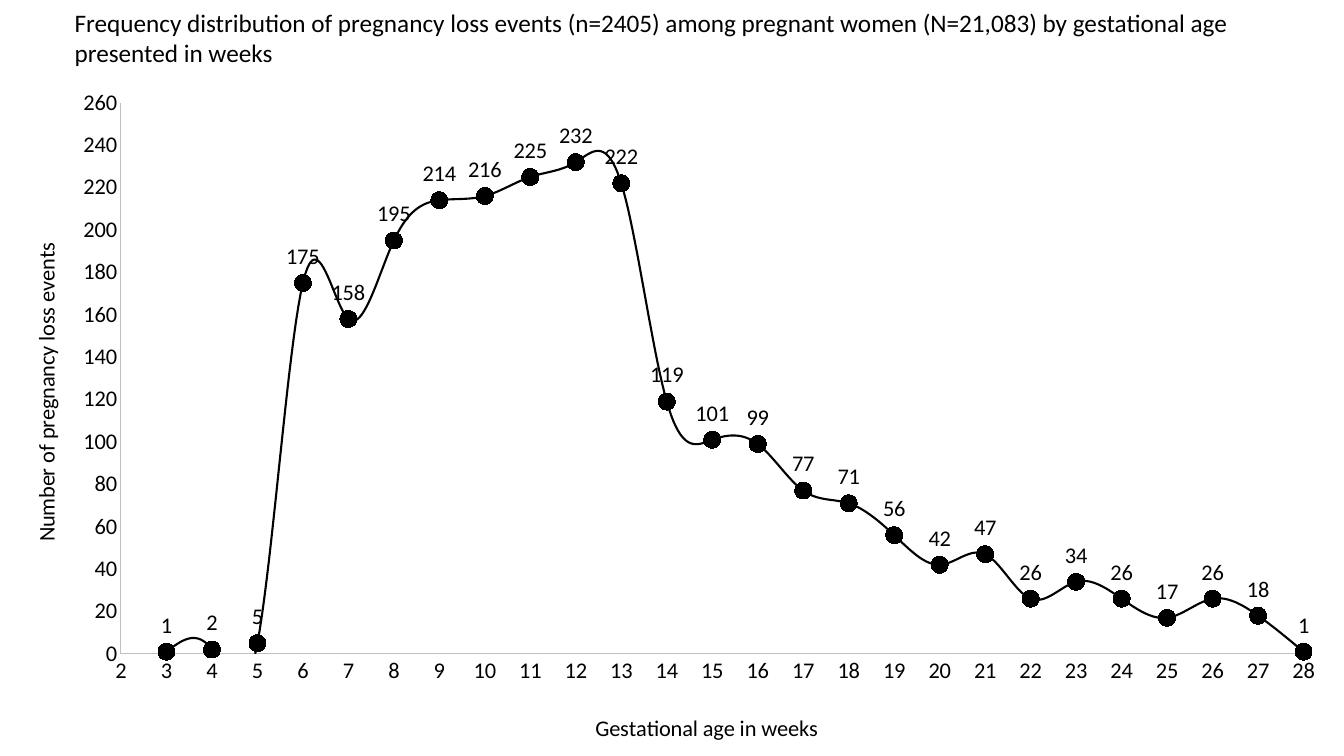
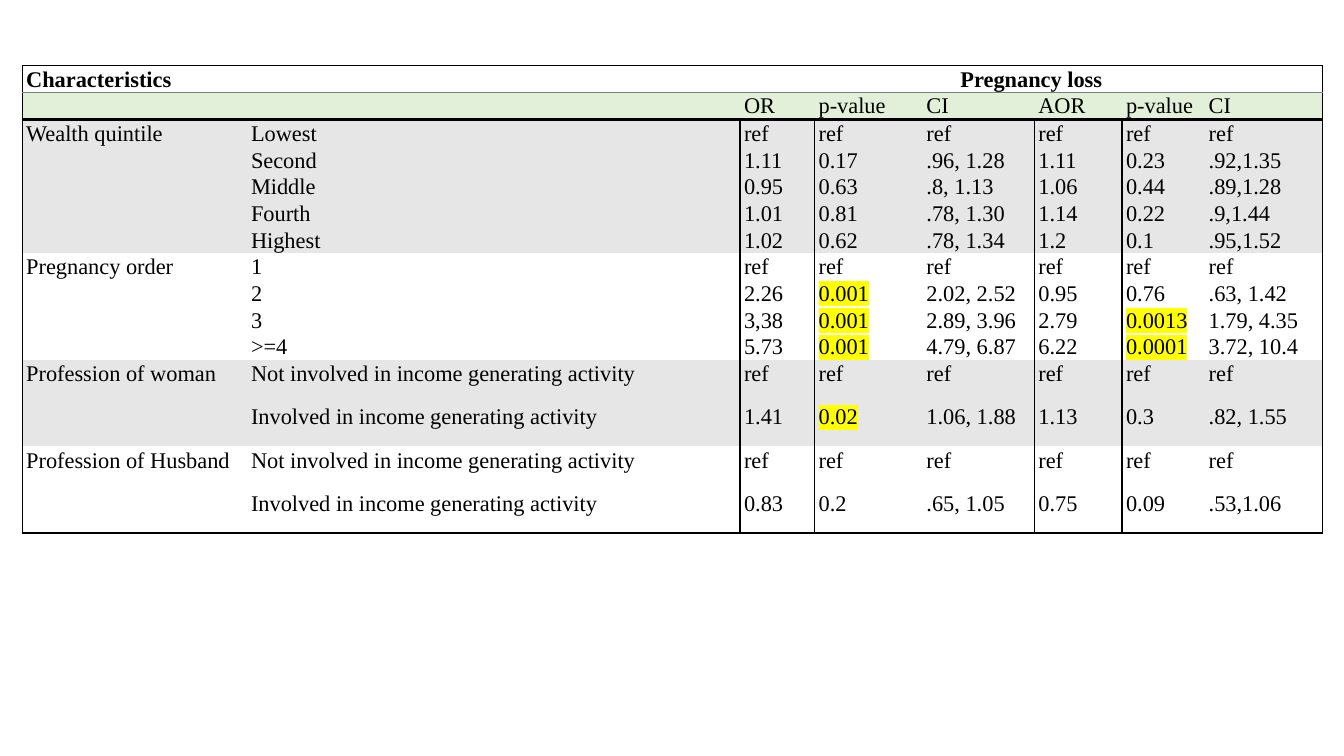
from dataclasses import dataclass

from lxml.etree import SubElement
from pptx import Presentation
from pptx.chart.data import XyChartData
from pptx.chart.datalabel import DataLabels
from pptx.dml.color import RGBColor
from pptx.enum.chart import (XL_CHART_TYPE, XL_LABEL_POSITION,
                             XL_MARKER_STYLE, XL_TICK_MARK)
from pptx.enum.text import MSO_ANCHOR, MSO_AUTO_SIZE, PP_ALIGN
from pptx.oxml.ns import qn
from pptx.util import Inches, Pt


@dataclass(frozen=True)
class Theme:
    ink: str = "000000"
    axis: str = "BFBFBF"
    rule: str = "7F7F7F"
    white: str = "FFFFFF"
    band: str = "E7E6E6"
    head: str = "E2F0D9"
    mark: str = "FFFF00"
    sans: str = "Calibri"
    serif: str = "Times New Roman"
    title: int = 18
    body: int = 16


THEME = Theme()
WIDE, HIGH = 13.33, 7.5

TITLE = ("Frequency distribution of pregnancy loss events (n=2405) among "
         "pregnant women (N=21,083) by gestational age presented in weeks")
FIRST = 3
LOSSES = [1, 2, 5, 175, 158, 195, 214, 216, 225, 232, 222, 119, 101,
          99, 77, 71, 56, 42, 47, 26, 34, 26, 17, 26, 18, 1]
# title, minimum, maximum, step, title place as shares of the chart
AXES = [("Gestational age in weeks", 2, 28, 1, (0.44, 0.93)),
        ("Number of pregnancy loss events", 0, 260, 20, (0.02, 0.24))]
PLOT = (0.09, 0.04, 0.88, 0.81)

COLS = [2.23, 4.89, 0.74, 1.07, 1.11, 0.87, 0.82, 1.17]
LEFT, TOP = 0.22, 0.65
LINE, TALL = 0.26, 0.43
HEAD_END = 1.19
P_COLS = (3, 6)
LEVEL = 0.05
STARTS, ENDS = (0, 2, 5), (1, 4, 7)

HEAD = [
    ["Characteristics", "", "Pregnancy loss"] + [""] * 5,
    ["", "", "OR", "p-value", "CI", "AOR", "p-value", "CI"],
]
REF = ["ref"] * 6
IDLE = "Not involved in income generating activity"
BUSY = "Involved in income generating activity"
# label, row height, rows
GROUPS = [
    ("Wealth quintile", LINE, [
        ["Lowest", *REF],
        ["Second", "1.11", "0.17", ".96, 1.28", "1.11", "0.23", ".92,1.35"],
        ["Middle", "0.95", "0.63", ".8, 1.13", "1.06", "0.44", ".89,1.28"],
        ["Fourth", "1.01", "0.81", ".78, 1.30", "1.14", "0.22", ".9,1.44"],
        ["Highest", "1.02", "0.62", ".78, 1.34", "1.2", "0.1", ".95,1.52"],
    ]),
    ("Pregnancy order", LINE, [
        ["1", *REF],
        ["2", "2.26", "0.001", "2.02, 2.52", "0.95", "0.76", ".63, 1.42"],
        ["3", "3,38", "0.001", "2.89, 3.96", "2.79", "0.0013", "1.79, 4.35"],
        [">=4", "5.73", "0.001", "4.79, 6.87", "6.22", "0.0001", "3.72, 10.4"],
    ]),
    ("Profession of woman", TALL, [
        [IDLE, *REF],
        [BUSY, "1.41", "0.02", "1.06, 1.88", "1.13", "0.3", ".82, 1.55"],
    ]),
    ("Profession of Husband", TALL, [
        [IDLE, *REF],
        [BUSY, "0.83", "0.2", ".65, 1.05", "0.75", "0.09", ".53,1.06"],
    ]),
]
NO_GRID = "{2D5ABB26-0587-4C30-8999-92F81FD0307C}"


def rgb(tone):
    return RGBColor.from_string(tone)


def style(font, size, face, bold=False):
    font.size, font.name, font.bold = Pt(size), face, bold
    font.color.rgb = rgb(THEME.ink)


def place(node, x, y, w=None, h=None):
    """Fix a chart part at shares of the chart's size."""
    box = node.find(qn("c:layout"))
    if box is None:
        box = SubElement(node, qn("c:layout"))
        node.insert(0, box)
    for child in list(box):
        box.remove(child)
    man = SubElement(box, qn("c:manualLayout"))
    parts = [("xMode", "edge"), ("yMode", "edge"), ("x", x), ("y", y)]
    if w:
        parts = [("layoutTarget", "inner"), *parts, ("w", w), ("h", h)]
    for tag, val in parts:
        SubElement(man, qn(f"c:{tag}")).set("val", str(val))


def add_title(slide):
    title = slide.shapes.title
    title.left, title.top = Inches(0.64), Inches(0.02)
    title.width, title.height = Inches(12.05), Inches(0.71)
    frame = title.text_frame
    frame.text = TITLE
    frame.word_wrap = True
    frame.auto_size = MSO_AUTO_SIZE.NONE
    frame.vertical_anchor = MSO_ANCHOR.TOP
    para = frame.paragraphs[0]
    para.alignment = PP_ALIGN.LEFT
    style(para.font, THEME.title, THEME.sans)


def set_axis(axis, name, low, high, step, spot):
    axis.minimum_scale, axis.maximum_scale = low, high
    axis.major_unit = step
    axis.has_major_gridlines = False
    axis.major_tick_mark = axis.minor_tick_mark = XL_TICK_MARK.NONE
    axis.format.line.color.rgb = rgb(THEME.axis)
    axis.format.line.width = Pt(0.75)
    style(axis.tick_labels.font, THEME.body, THEME.sans)
    frame = axis.axis_title.text_frame
    frame.text = name
    style(frame.paragraphs[0].font, THEME.body, THEME.sans)
    place(axis.axis_title._element, *spot)


def add_curve(slide):
    data = XyChartData()
    dots = data.add_series("Series 1")
    for week, count in enumerate(LOSSES, FIRST):
        dots.add_data_point(week, count)
    top = HIGH * 0.1
    chart = slide.shapes.add_chart(
        XL_CHART_TYPE.XY_SCATTER_SMOOTH, 0, Inches(top),
        Inches(WIDE), Inches(HIGH - top), data).chart
    chart.has_legend = chart.has_title = False
    style(chart.font, THEME.body, THEME.sans)
    for axis, info in zip((chart.category_axis, chart.value_axis), AXES):
        set_axis(axis, *info)
    turn = chart.value_axis.axis_title.text_frame._txBody.bodyPr
    turn.set("rot", "-5400000")
    turn.set("vert", "horz")
    plot = chart.plots[0]
    plot.vary_by_categories = False
    place(chart._chartSpace.chart.plotArea, *PLOT)

    curve = plot.series[0]
    curve._element.get_or_add_smooth().val = True
    curve.format.line.color.rgb = rgb(THEME.ink)
    curve.format.line.width = Pt(1.5)
    dot = curve.marker
    dot.style, dot.size = XL_MARKER_STYLE.CIRCLE, 12
    dot.format.fill.solid()
    dot.format.fill.fore_color.rgb = rgb(THEME.ink)
    dot.format.line.color.rgb = rgb(THEME.ink)
    tags = DataLabels(curve._element.get_or_add_dLbls())
    tags.show_value = True
    tags.position = XL_LABEL_POSITION.ABOVE
    style(tags.font, THEME.body, THEME.sans)


def tint(node, tag, tone):
    part = SubElement(node, qn(f"a:{tag}"))
    SubElement(part, qn("a:srgbClr")).set("val", tone)


def set_cell(cell, text, fill, edges, bold=False, mark=False):
    """Write one cell; edges maps a side (L, R, T, B) to a colour."""
    cell.margin_left = cell.margin_right = Inches(0.04)
    cell.margin_top = cell.margin_bottom = 0
    props = cell._tc.get_or_add_tcPr()
    for side in "LRTB":
        if side in edges:
            line = SubElement(props, qn(f"a:ln{side}"), w=str(Pt(1)))
            tint(line, "solidFill", edges[side])
    cell.fill.solid()
    cell.fill.fore_color.rgb = rgb(fill)
    para = cell.text_frame.paragraphs[0]
    para.line_spacing = 1.07
    style(para.font, THEME.body, THEME.serif, bold)
    if text:
        run = para.add_run()
        run.text = text
        if mark:
            tint(run._r.get_or_add_rPr(), "highlight", THEME.mark)
    else:
        SubElement(para._p, qn("a:endParaRPr"), sz=str(THEME.body * 100))


def add_grid(slide, top, heights):
    table = slide.shapes.add_table(
        len(heights), len(COLS), Inches(LEFT), Inches(top),
        Inches(sum(COLS)), Inches(sum(heights))).table
    table.first_row = table.horz_banding = False
    table._tbl.tblPr.find(qn("a:tableStyleId")).text = NO_GRID
    for col, width in zip(table.columns, COLS):
        col.width = Inches(width)
    for row, height in zip(table.rows, heights):
        row.height = Inches(height)
    return table


def add_head(slide):
    table = add_grid(slide, TOP, [LINE] * len(HEAD))
    looks = [(THEME.white, THEME.ink, THEME.rule, True),
             (THEME.head, THEME.rule, THEME.ink, False)]
    for r, (row, (fill, over, under, bold)) in enumerate(zip(HEAD, looks)):
        for c, text in enumerate(row):
            edges = {"T": over, "B": under}
            if c == 0:
                edges["L"] = THEME.ink
            if c >= len(COLS) - 1 or (r == 0 and c == 2):
                edges["R"] = THEME.ink
            set_cell(table.cell(r, c), text, fill, edges, bold)
    span = table.cell(0, 2)
    span.merge(table.cell(0, len(COLS) - 1))
    span.text_frame.paragraphs[0].alignment = PP_ALIGN.CENTER


def add_body(slide):
    rows, heights = [], []
    for g, (label, height, items) in enumerate(GROUPS):
        fill = THEME.white if g % 2 else THEME.band
        for i, item in enumerate(items):
            rows.append((fill, [label if i == 0 else "", *item]))
            heights.append(height)
    table = add_grid(slide, HEAD_END, heights)
    for r, (fill, row) in enumerate(rows):
        for c, text in enumerate(row):
            edges = {}
            if c in STARTS:
                edges["L"] = THEME.ink
            if c in ENDS:
                edges["R"] = THEME.ink
            if r == 0:
                edges["T"] = THEME.ink
            if r == len(rows) - 1:
                edges["B"] = THEME.ink
            mark = c in P_COLS and text != "ref" and float(text) < LEVEL
            set_cell(table.cell(r, c), text, fill, edges, mark=mark)


def main():
    deck = Presentation()
    deck.slide_width, deck.slide_height = Inches(WIDE), Inches(HIGH)
    only, blank = deck.slide_layouts[5], deck.slide_layouts[6]
    slide = deck.slides.add_slide(only)
    add_curve(slide)
    add_title(slide)
    slide = deck.slides.add_slide(blank)
    add_body(slide)
    add_head(slide)
    deck.save("out.pptx")


if __name__ == "__main__":
    main()
